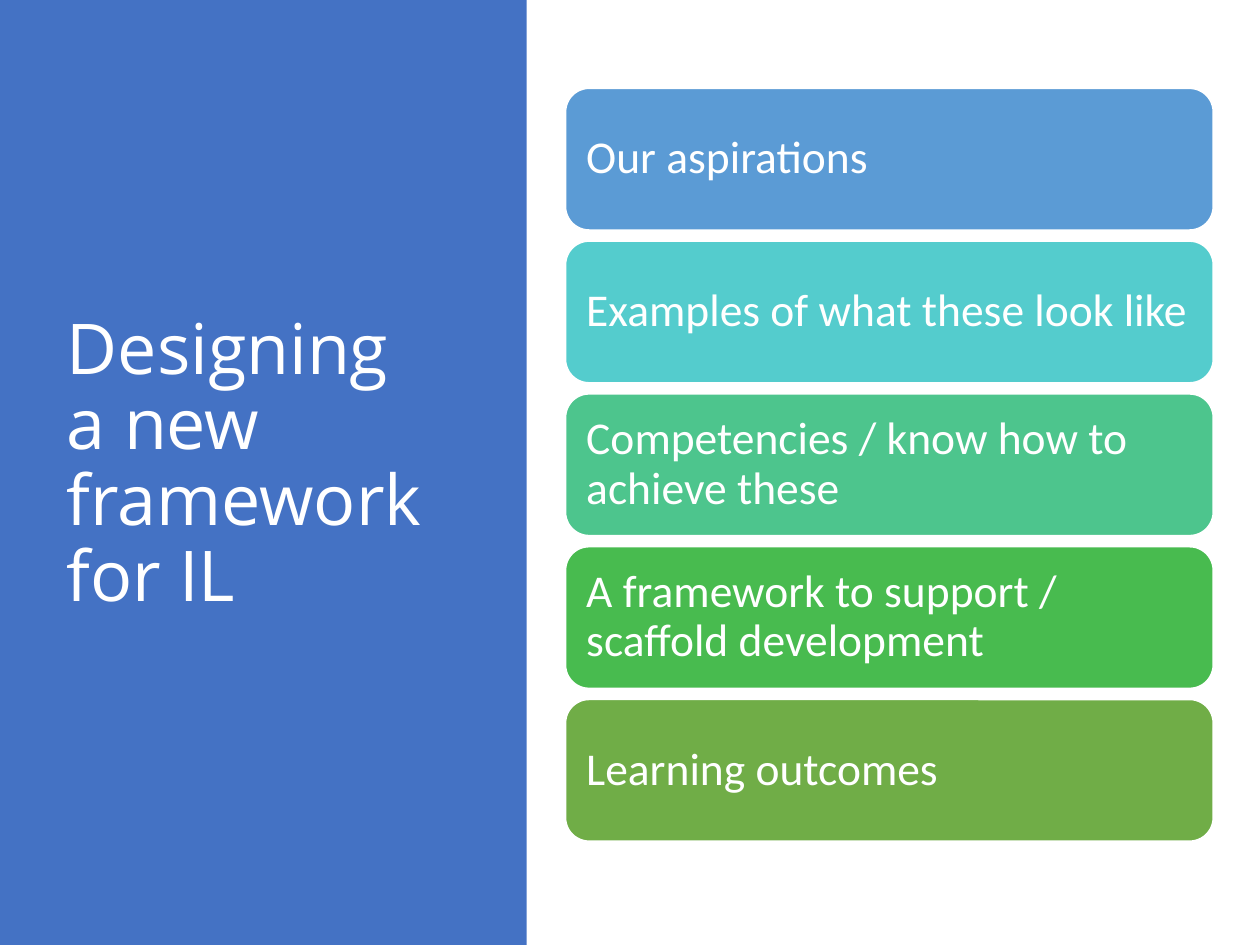
import pptx
import pptx.util
import pptx.dml.color
import pptx.enum.shapes
import pptx.enum.text

Cm, Pt = pptx.util.Cm, pptx.util.Pt
SHAPE = pptx.enum.shapes.MSO_SHAPE
WHITE = "FFFFFF"


def rgb(value):
    return pptx.dml.color.RGBColor.from_string(value)


def write(s, text, font, size, inset):
    tf = s.text_frame
    frame_format = {
        "word_wrap": True,
        "auto_size": pptx.enum.text.MSO_AUTO_SIZE.NONE,
        "vertical_anchor": pptx.enum.text.MSO_ANCHOR.MIDDLE,
        "margin_left": inset[0], "margin_right": inset[0],
        "margin_top": inset[1], "margin_bottom": inset[1],
    }
    for name, value in frame_format.items():
        setattr(tf, name, value)
    p = tf.paragraphs[0]
    p.alignment = pptx.enum.text.PP_ALIGN.LEFT
    p.line_spacing = 0.9
    r = p.add_run()
    r.text = text
    for name, value in {"name": font, "size": Pt(size)}.items():
        setattr(r.font, name, value)
    r.font.color.rgb = rgb(WHITE)


prs = pptx.Presentation()
prs.slide_width, prs.slide_height = Cm(25.4), Cm(19.05)
slide = prs.slides.add_slide(prs.slide_layouts[5])

# Title
title = slide.shapes.title
place = {"left": Cm(1.1), "top": Cm(1.73), "width": Cm(7.92), "height": Cm(15.29)}
for name, value in place.items():
    setattr(title, name, value)
write(title, "Designing a new framework for IL", "Open Sans", 40, (Cm(0.25), Cm(0.13)))

# Blue panel behind the title
panel = slide.shapes.add_shape(SHAPE.RECTANGLE, 0, 0, Cm(10.62), prs.slide_height)
panel.shadow.inherit = False
panel.fill.solid()
panel.fill.fore_color.rgb = rgb("4472C4")
panel.line.fill.background()
title._element.addprevious(panel._element)

# Stack of framework parts
parts = [
    ("Our aspirations", "5B9BD5"),
    ("Examples of what these look like", "54CCCD"),
    ("Competencies / know how to achieve these", "4DC58D"),
    ("A framework to support / scaffold development", "48BB4F"),
    ("Learning outcomes", "70AD47"),
]
for i, (text, colour) in enumerate(parts):
    s = slide.shapes.add_shape(SHAPE.ROUNDED_RECTANGLE, Cm(11.4), Cm(1.78 + 3.08 * i),
                               Cm(13.06), Cm(2.86))
    s.shadow.inherit = False
    s.fill.solid()
    s.fill.fore_color.rgb = rgb(colour)
    s.line.color.rgb = rgb(WHITE)
    s.line.width = Pt(1)
    write(s, text, "Calibri", 26, (Cm(0.28), Cm(0.28)))

prs.save("out.pptx")
